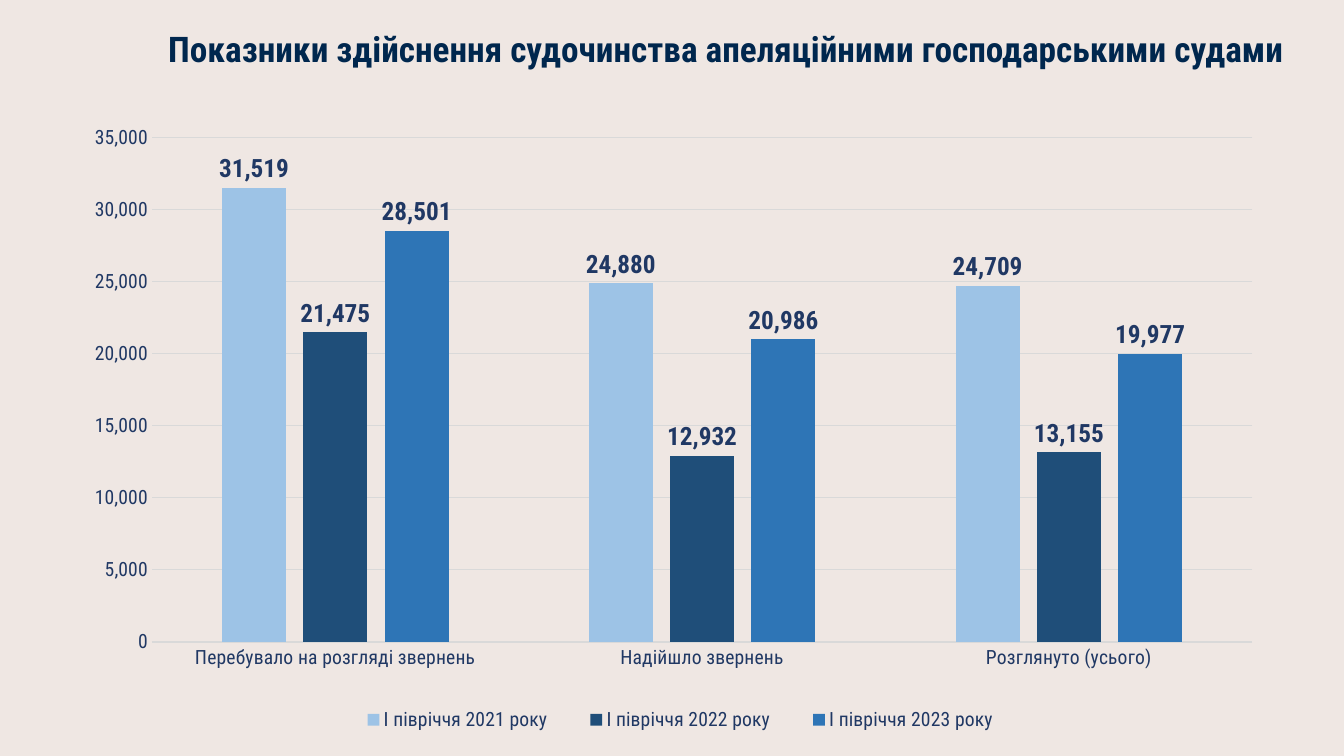
from lxml import etree
from pptx import Presentation
from pptx.chart.data import CategoryChartData
from pptx.dml.color import RGBColor
from pptx.enum.chart import XL_CHART_TYPE, XL_LABEL_POSITION, XL_LEGEND_POSITION, XL_TICK_MARK
from pptx.enum.text import MSO_ANCHOR
from pptx.oxml.ns import qn
from pptx.util import Inches, Pt

TITLE = "Показники здійснення судочинства апеляційними господарськими судами"
CATEGORIES = ["Перебувало на розгляді звернень", "Надійшло звернень", "Розглянуто (усього)"]
BACKGROUND = RGBColor(0xEF, 0xE7, 0xE3)
TITLE_NAVY = RGBColor(0x00, 0x27, 0x4E)
TEXT_NAVY = RGBColor(0x20, 0x38, 0x64)
GRID_GREY = RGBColor(0xD9, 0xD9, 0xD9)
SERIES = [
    ("І півріччя 2021 року", (31519, 24880, 24709), RGBColor(0x9D, 0xC3, 0xE6)),
    ("І півріччя 2022 року", (21475, 12932, 13155), RGBColor(0x1F, 0x4E, 0x79)),
    ("І півріччя 2023 року", (28501, 20986, 19977), RGBColor(0x2E, 0x75, 0xB6)),
]
FONT = "Roboto Condensed"
NUMBER_FORMAT = "#,##0"
TITLE_BOX = (1.57, 0.13, 11.76, 0.76)
CHART_BOX = (0.66, 1.17, 11.94, 6.22)
PLOT_LAYOUT = {"layoutTarget": "inner", "xMode": "edge", "yMode": "edge",
               "x": 0.071, "y": 0.031, "w": 0.914, "h": 0.805}
LEGEND_LAYOUT = {"xMode": "edge", "yMode": "edge", "x": 0.22, "y": 0.93, "w": 0.58, "h": 0.06}
TEXT_FORMAT = {"name": FONT, "size": Pt(14), "bold": False}
LABEL_FORMAT = {"name": FONT, "size": Pt(18), "bold": True}
TITLE_FORMAT = {"name": FONT, "size": Pt(25.2), "bold": True}


def set_font(font, style, color):
    for name, value in style.items():
        setattr(font, name, value)
    font.color.rgb = color


def set_line(line):
    line.color.rgb = GRID_GREY
    line.width = Pt(0.75)


def set_layout(parent, position, values):
    for old in parent.findall(qn("c:layout")):
        parent.remove(old)
    layout = etree.Element(qn("c:layout"))
    manual = etree.SubElement(layout, qn("c:manualLayout"))
    for name, value in values.items():
        etree.SubElement(manual, qn(f"c:{name}")).set("val", str(value))
    parent.insert(position, layout)


def add_title(s):
    tf = s.shapes.add_textbox(*map(Inches, TITLE_BOX)).text_frame
    tf.word_wrap = True
    tf.vertical_anchor = MSO_ANCHOR.MIDDLE
    p = tf.paragraphs[0]
    p.line_spacing = 0.9
    r = p.add_run()
    r.text = TITLE
    set_font(r.font, TITLE_FORMAT, TITLE_NAVY)


def add_indicators(s):
    data = CategoryChartData(number_format=NUMBER_FORMAT)
    data.categories = CATEGORIES
    for name, values, _ in SERIES:
        data.add_series(name, values)
    chart = s.shapes.add_chart(
        XL_CHART_TYPE.COLUMN_CLUSTERED, *map(Inches, CHART_BOX), data).chart
    chart.has_title = False
    chart.has_legend = True
    chart.legend.position = XL_LEGEND_POSITION.BOTTOM
    chart.legend.include_in_layout = False

    cat, val = chart.category_axis, chart.value_axis
    for axis in (cat, val):
        axis.major_tick_mark = axis.minor_tick_mark = XL_TICK_MARK.NONE
    for part in (chart, chart.legend, cat.tick_labels, val.tick_labels):
        set_font(part.font, TEXT_FORMAT, TEXT_NAVY)
    set_line(cat.format.line)
    set_line(val.major_gridlines.format.line)
    val.format.line.fill.background()
    val.minimum_scale, val.maximum_scale, val.major_unit = 0, 35000, 5000
    val.tick_labels.number_format = NUMBER_FORMAT
    val.tick_labels.number_format_is_linked = False

    plot = chart.plots[0]
    plot.gap_width, plot.overlap, plot.vary_by_categories = 219, -27, False
    for series, (_, _, color) in zip(plot.series, SERIES):
        series.format.fill.solid()
        series.format.fill.fore_color.rgb = color
        labels = series.data_labels
        labels.show_value = True
        labels.position = XL_LABEL_POSITION.OUTSIDE_END
        labels.number_format = NUMBER_FORMAT
        labels.number_format_is_linked = False
        set_font(labels.font, LABEL_FORMAT, TEXT_NAVY)

    root = chart.element
    set_layout(root.find(f".//{qn('c:plotArea')}"), 0, PLOT_LAYOUT)
    set_layout(root.find(f".//{qn('c:legend')}"), 1, LEGEND_LAYOUT)


def main():
    prs = Presentation()
    prs.slide_width, prs.slide_height = Inches(13.33), Inches(7.5)
    s = prs.slides.add_slide(prs.slide_layouts[6])
    s.background.fill.solid()
    s.background.fill.fore_color.rgb = BACKGROUND
    add_indicators(s)
    add_title(s)
    prs.save("out.pptx")


if __name__ == "__main__":
    main()
